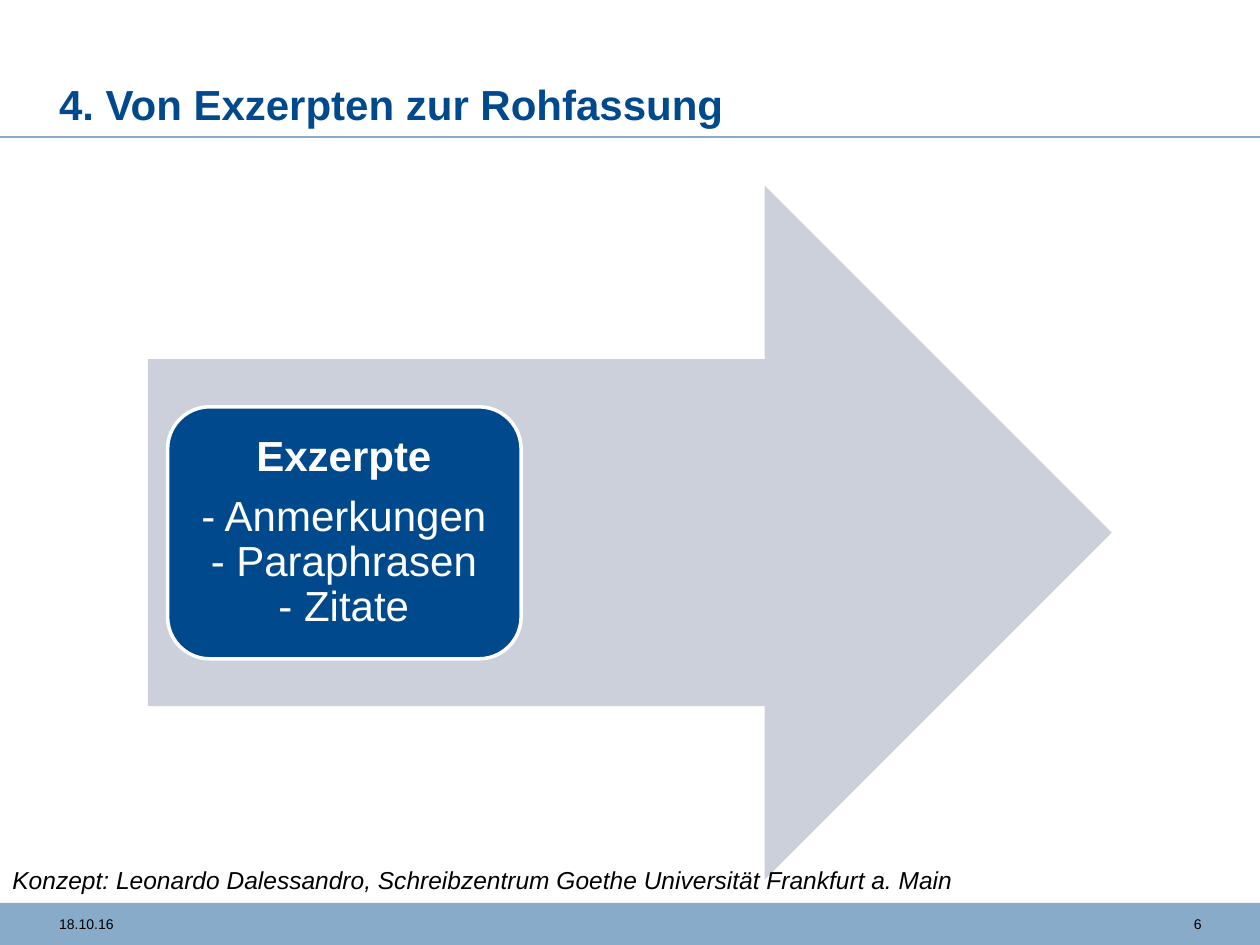
from dataclasses import dataclass

from lxml import etree
from pptx import Presentation
from pptx import util as u
from pptx.dml.color import RGBColor
from pptx.enum import shapes, text
from pptx.oxml.ns import qn

HUES = {"navy": "00498D", "sky": "89ABCA", "mist": "CCD0DB", "white": "FFFFFF", "black": "000000"}
WIDE, HIGH = 720, 540
KIND = shapes.MSO_SHAPE
ALIGN = text.PP_ALIGN
ANCHOR = text.MSO_ANCHOR


@dataclass
class Box:
    """Left, top, width and height in points."""
    x: float
    y: float
    w: float
    h: float

    def place(self) -> list:
        """Return the four lengths."""
        return [u.Pt(n) for n in (self.x, self.y, self.w, self.h)]


@dataclass
class Block:
    """A filled preset shape."""
    kind: KIND
    box: Box
    fill: str
    edge: str = ""


@dataclass
class Line:
    """A paragraph and whether it is bold."""
    words: str
    bold: bool = False


def hue(name: str) -> RGBColor:
    """Return the named colour."""
    return RGBColor.from_string(HUES[name])


def draw(slide, block: Block) -> None:
    """Draw a filled shape."""
    shape = slide.shapes.add_shape(block.kind, *block.box.place())
    shape.shadow.inherit = False
    shape.fill.solid()
    shape.fill.fore_color.rgb = hue(block.fill)
    if block.edge:
        shape.line.color.rgb = hue(block.edge)
        shape.line.width = u.Pt(2)
    else:
        shape.line.fill.background()


def rule(slide, y: float) -> None:
    """Draw a thin line across the slide."""
    line = slide.shapes.add_connector(shapes.MSO_CONNECTOR.STRAIGHT, 0, u.Pt(y), u.Pt(WIDE), u.Pt(y))
    line.line.color.rgb = hue("sky")
    line.line.width = u.Pt(1)
    etree.SubElement(line._element.spPr, qn("a:effectLst"))


def write(slide, box: Box, *lines: Line, size: float = 24, color: str = "black",
          italic: bool = False, align=ALIGN.LEFT, anchor=ANCHOR.TOP,
          pad: tuple = (0, 3.6), pitch: float = 1, after: float = 0) -> None:
    """Write formatted paragraphs in a text box."""
    frame = slide.shapes.add_textbox(*box.place()).text_frame
    frame.word_wrap = True
    frame.vertical_anchor = anchor
    frame.margin_left = frame.margin_right = u.Pt(pad[0])
    frame.margin_top = frame.margin_bottom = u.Pt(pad[1])
    for i, line in enumerate(lines):
        para = frame.add_paragraph() if i else frame.paragraphs[0]
        para.text = line.words
        para.alignment = align
        para.line_spacing = pitch
        para.space_after = u.Pt(after)
        for run in para.runs:
            font = run.font
            font.name, font.size = "Arial", u.Pt(size)
            font.bold, font.italic = line.bold, italic
            font.color.rgb = hue(color)


def main() -> None:
    """Build and save the slide."""
    deck = Presentation()
    deck.slide_width, deck.slide_height = u.Pt(WIDE), u.Pt(HIGH)
    slide = deck.slides.add_slide(deck.slide_layouts[6])

    draw(slide, Block(KIND.RECTANGLE, Box(0, 516, WIDE, 24), "sky"))
    write(slide, Box(650.7, 519.8, 36, 18), Line("6"), size=8, align=ALIGN.RIGHT)
    write(slide, Box(33.8, 519.8, 150.5, 18), Line("18.10.16"), size=8)
    rule(slide, 78.5)
    write(slide, Box(33.8, 11.5, 578.2, 65.5), Line("4. Von Exzerpten zur Rohfassung", True),
          color="navy", anchor=ANCHOR.BOTTOM)

    for block in (
        Block(KIND.RIGHT_ARROW, Box(84.5, 106, 550.8, 396.8), "mist"),
        Block(KIND.ROUNDED_RECTANGLE, Box(95.8, 232.5, 202, 144), "navy", "white"),
    ):
        draw(slide, block)
    write(slide, Box(102.5, 239.5, 188, 130), Line("Exzerpte", True),
          Line("- Anmerkungen\n- Paraphrasen\n- Zitate"), color="white",
          align=ALIGN.CENTER, anchor=ANCHOR.MIDDLE, pad=(7.2, 7.2), pitch=0.9, after=8.4)
    write(slide, Box(0, 491, 562.3, 24.5),
          Line("Konzept: Leonardo Dalessandro, Schreibzentrum Goethe Universität Frankfurt a. Main"),
          size=14, italic=True, pad=(7.2, 3.6))

    deck.save("out.pptx")


if __name__ == "__main__":
    main()
